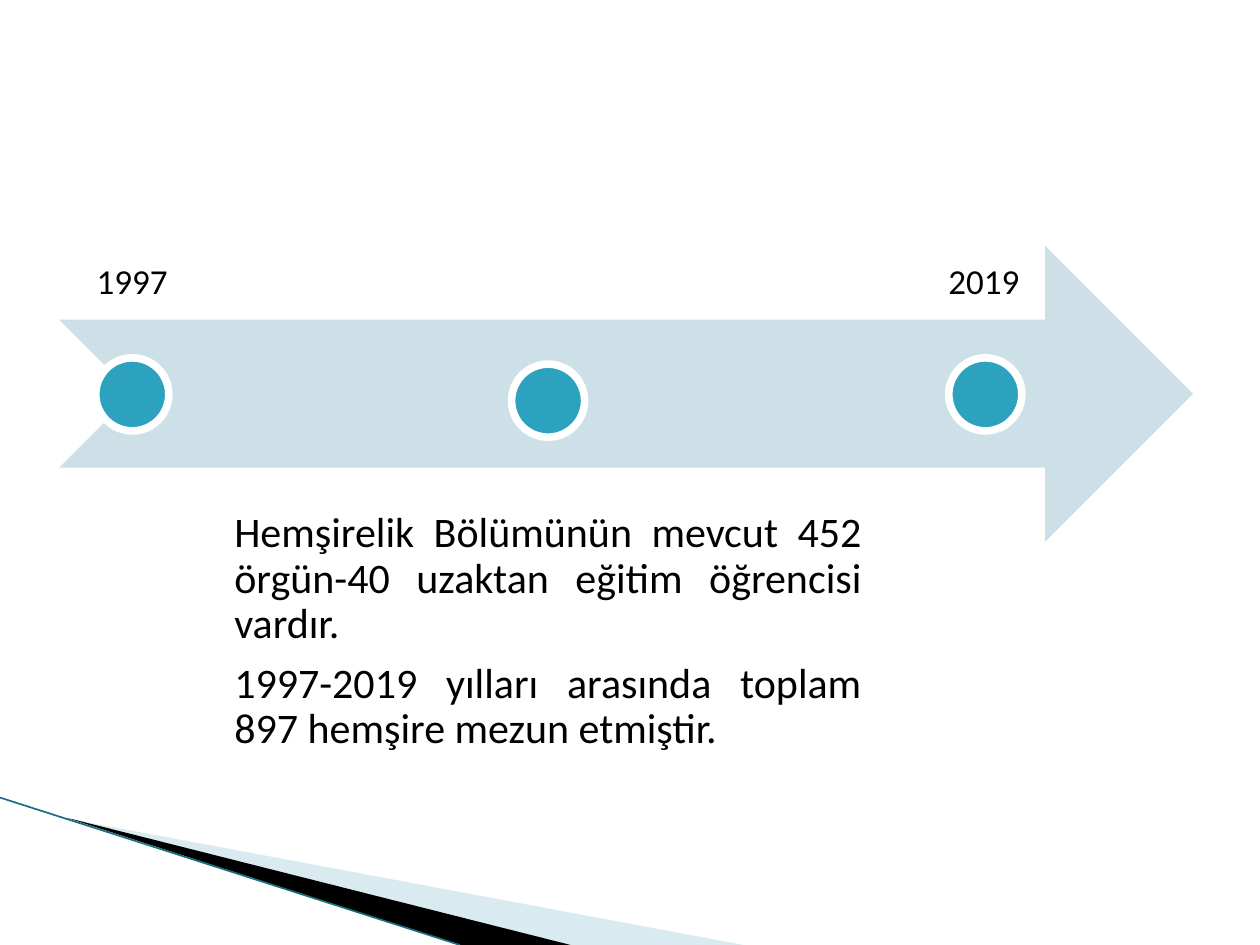
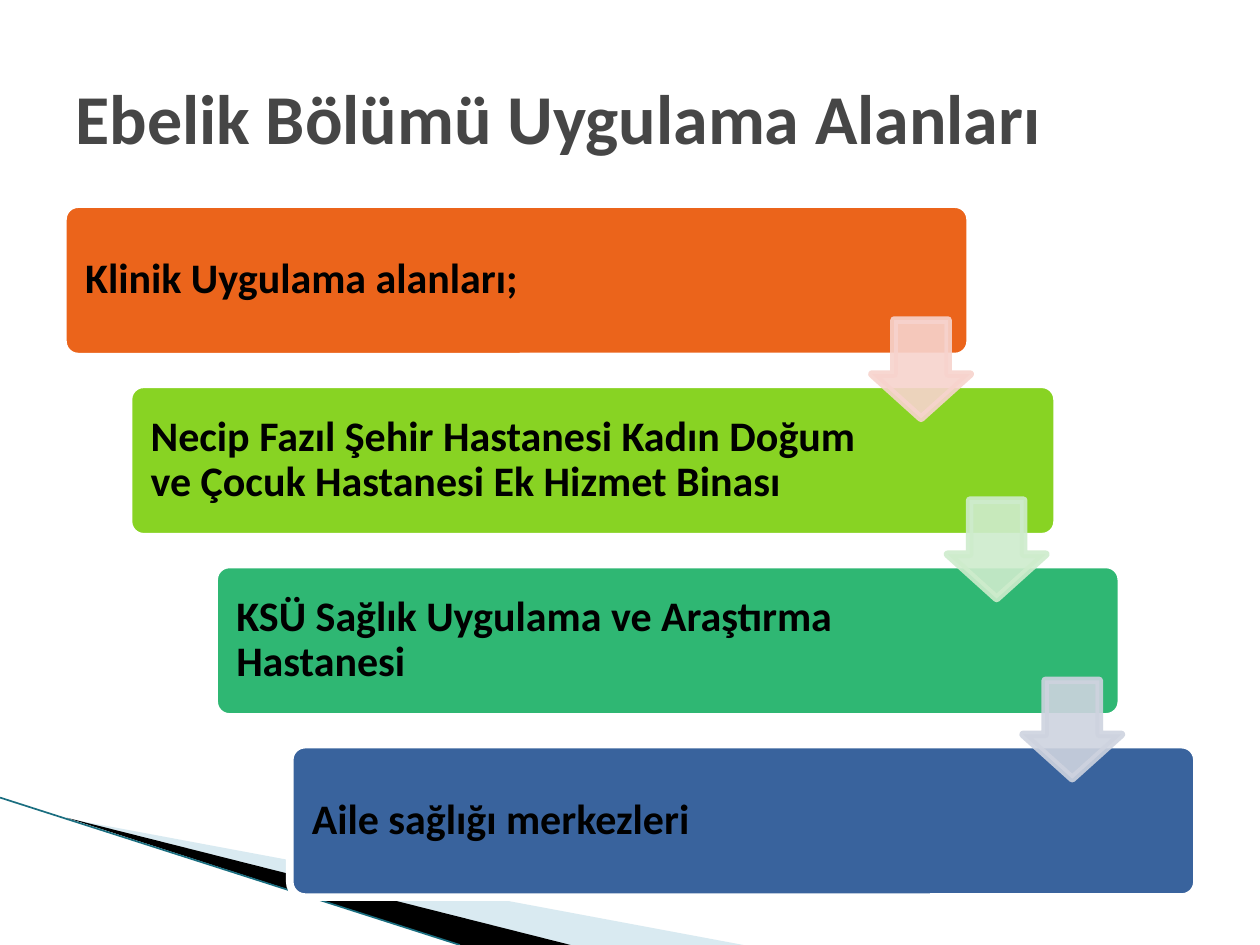
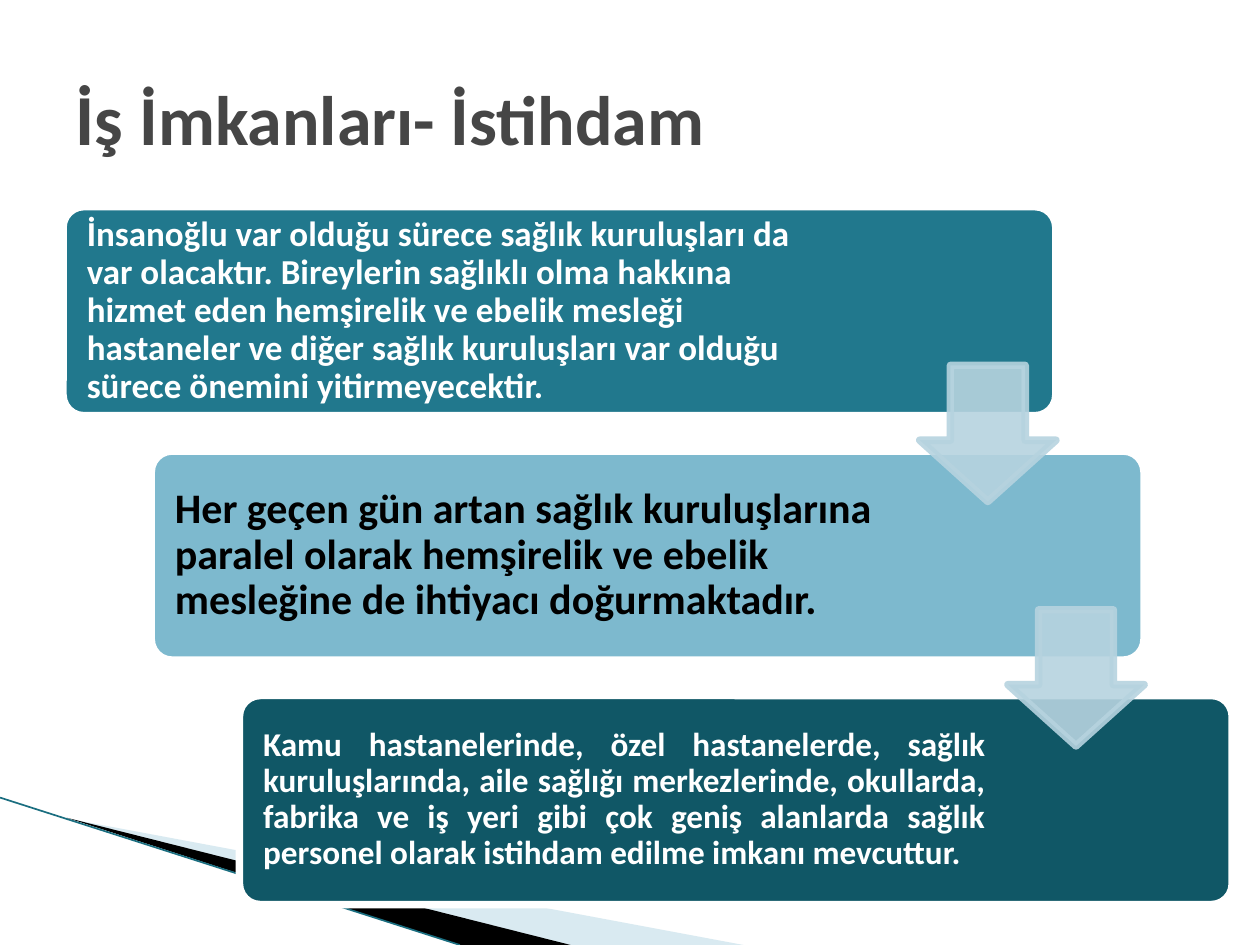
from lxml import etree
from pptx import Presentation
from pptx import util as u
from pptx.dml.color import RGBColor
from pptx.enum import shapes, text
from pptx.oxml.ns import qn

PX = 9144  # EMU in one px, at 100 px to the inch
SLIDE_WIDTH, SLIDE_HEIGHT = 1000, 750
FONT = "Calibri"
OUTLINE = 4.33
TITLE_ONLY, BLANK = 5, 6
LEFT, CENTER, JUSTIFY = text.PP_ALIGN.LEFT, text.PP_ALIGN.CENTER, text.PP_ALIGN.JUSTIFY
MIDDLE, BOTTOM, TOP = text.MSO_ANCHOR.MIDDLE, text.MSO_ANCHOR.BOTTOM, text.MSO_ANCHOR.TOP

COLORS = {
    "white": "FFFFFF", "black": "000000", "title": "464646",
    "swoosh": "A0CBDC", "swoosh line": "1A6E80",
    "timeline": "CDE0E8", "dot": "2DA2BF",
    "orange": "EB641B", "lime": "88D323", "green": "2FB773", "blue": "39639D",
    "pale orange": "F7D3CD", "pale lime": "CEECCC", "pale green": "CED3DF",
    "teal": "21788D", "sky": "7DB9CE", "deep teal": "105766", "pale teal": "B6D3DF",
}

SWOOSH = [  # fill, opacity in percent, outline points
    ("swoosh", 40, [(55, 650), (590, 750), (452, 750)]),
    ("black", 100, [(53, 649), (453, 750), (365, 750)]),
]
SWOOSH_LINE = (0, 633, 365, 750)

TIMELINE = {
    "arrow": (47, 195, 900, 235),
    "dots": [(76, 284), (406, 289), (753, 284)],
    "dot size": 58,
    "years": [("1997", (47, 23, 116, 232)), ("2019", (706, 23, 150, 232))],
    "story": [
        "Hemşirelik Bölümünün mevcut 452 örgün-40 uzaktan eğitim öğrencisi vardır.",
        "1997-2019 yılları arasında toplam 897 hemşire mezun etmiştir.",
    ],
    "story box": (167, 387, 536, 209),
}

# A card is (text, fill, text colour, size, alignment, shift, extra width).
STAIRCASES = [
    {
        "title": [("Ebelik Bölümü Uygulama Alanları", 40)],
        "title width": 848,
        "first card": (50, 162, 720, 121),
        "step": (60, 143),
        "right margin": 152,
        "cards": [
            ("Klinik Uygulama alanları;", "orange", "black", 24, LEFT, 0, 0),
            ("Necip Fazıl Şehir Hastanesi Kadın Doğum ve Çocuk Hastanesi Ek Hizmet Binası",
             "lime", "black", 24, LEFT, -8, 17),
            ("KSÜ Sağlık Uygulama ve Araştırma Hastanesi", "green", "black", 24, LEFT, 0, 0),
            ("Aile sağlığı merkezleri", "blue", "black", 24, LEFT, 0, 0),
        ],
        "arrows": ["pale orange", "pale lime", "pale green"],
        "arrow size": 78,
        "arrow drop": 92,
    },
    {
        "title": [("İş ", 41), ("İmkanları- İstihdam", 40)],
        "title width": 900,
        "first card": (50, 164, 788, 166),
        "step": (70, 194),
        "right margin": 191,
        "cards": [
            ("İnsanoğlu var olduğu sürece sağlık kuruluşları da var olacaktır. Bireylerin "
             "sağlıklı olma hakkına hizmet eden hemşirelik ve ebelik mesleği hastaneler ve "
             "diğer sağlık kuruluşları var olduğu sürece önemini yitirmeyecektir.",
             "teal", "white", 20, LEFT, 0, 0),
            ("Her geçen gün artan sağlık kuruluşlarına paralel olarak hemşirelik ve ebelik "
             "mesleğine de ihtiyacı doğurmaktadır.", "sky", "black", 24, LEFT, 0, 0),
            ("Kamu hastanelerinde, özel hastanelerde, sağlık kuruluşlarında, aile sağlığı "
             "merkezlerinde, okullarda, fabrika ve iş yeri gibi çok geniş alanlarda sağlık "
             "personel olarak istihdam edilme imkanı mevcuttur.",
             "deep teal", "white", 19, JUSTIFY, 0, 0),
        ],
        "arrows": ["pale teal", "pale teal"],
        "arrow size": 108,
        "arrow drop": 126,
    },
]


def emu(*lengths):
    return [u.Emu(length * PX) for length in lengths]


def rgb(name):
    return RGBColor.from_string(COLORS[name])


def paint(shape, fill, line=None, opacity=100):
    """Set a flat fill and outline; opacity applies to both."""
    shape.shadow.inherit = False
    shape.fill.solid()
    shape.fill.fore_color.rgb = rgb(fill)
    if line:
        shape.line.color.rgb = rgb(line)
        shape.line.width = u.Pt(OUTLINE)
    else:
        shape.line.fill.background()
    if opacity < 100:
        for color in shape._element.spPr.iter(qn("a:srgbClr")):
            etree.SubElement(color, qn("a:alpha"), val=str(opacity * 1000))


def add_shape(slide, preset, box, fill, line=None, opacity=100):
    shape = slide.shapes.add_shape(preset, *emu(*box))
    paint(shape, fill, line, opacity)
    return shape


def style_run(run, size, color, bold):
    run.font.name = FONT
    run.font.size = u.Pt(size)
    run.font.bold = bold
    run.font.color.rgb = rgb(color)


def write(shape, lines, size, color, alignment, anchor, margins, bold=False):
    """Fill a shape with paragraphs; margins are left, top, right, bottom."""
    frame = shape.text_frame
    frame.word_wrap = True
    frame.vertical_anchor = anchor
    (frame.margin_left, frame.margin_top,
     frame.margin_right, frame.margin_bottom) = emu(*margins)
    frame.text = "\n".join(lines)
    for paragraph in frame.paragraphs:
        paragraph.alignment = alignment
        paragraph.line_spacing = 0.9
        paragraph.space_after = u.Pt(round(size * 0.35, 1))
        for run in paragraph.runs:
            style_run(run, size, color, bold)


def add_swoosh(slide):
    for fill, opacity, points in SWOOSH:
        builder = slide.shapes.build_freeform(*points[0], scale=PX)
        builder.add_line_segments(points[1:])
        paint(builder.convert_to_shape(), fill, opacity=opacity)
    line = slide.shapes.add_connector(shapes.MSO_CONNECTOR.STRAIGHT, *emu(*SWOOSH_LINE))
    line.line.color.rgb = rgb("swoosh line")
    line.line.width = u.Pt(0.95)
    etree.SubElement(line._element.spPr, qn("a:effectLst"))


def add_slide(presentation, layout):
    slide = presentation.slides.add_slide(presentation.slide_layouts[layout])
    add_swoosh(slide)
    return slide


def set_title(slide, parts, width):
    title = slide.shapes.title
    title.left, title.top, title.width, title.height = emu(50, 30, width, 125)
    title.text_frame.vertical_anchor = MIDDLE
    paragraph = title.text_frame.paragraphs[0]
    paragraph.alignment = LEFT
    for words, size in parts:
        run = paragraph.add_run()
        run.text = words
        style_run(run, size, "title", True)


def add_timeline(slide, timeline):
    preset = shapes.MSO_SHAPE
    add_shape(slide, preset.NOTCHED_RIGHT_ARROW, timeline["arrow"], "timeline")
    size = timeline["dot size"]
    for left, top in timeline["dots"]:
        add_shape(slide, preset.OVAL, (left, top, size, size), "dot", "white")
    for year, box in timeline["years"]:
        label = slide.shapes.add_textbox(*emu(*box))
        write(label, [year], 20, "black", CENTER, BOTTOM, [16] * 4)
    story = slide.shapes.add_textbox(*emu(*timeline["story box"]))
    write(story, timeline["story"], 24, "black", JUSTIFY, TOP, [19] * 4)


def add_staircase(slide, stairs):
    """Place cards down a diagonal, then an arrow from each card to the next."""
    left, top, width, height = stairs["first card"]
    step_x, step_y = stairs["step"]
    margins = (14, 5, stairs["right margin"], 5)
    for i, (words, fill, color, size, alignment, shift, extra) in enumerate(stairs["cards"]):
        box = (left + i * step_x + shift, top + i * step_y, width + extra, height)
        card = add_shape(slide, shapes.MSO_SHAPE.ROUNDED_RECTANGLE, box, fill, "white")
        card.adjustments[0] = 0.1
        write(card, [words], size, color, alignment, MIDDLE, margins, bold=True)
    side = stairs["arrow size"]
    for i, color in enumerate(stairs["arrows"]):
        box = (left + width - side + i * step_x,
               top + stairs["arrow drop"] + i * step_y, side, side)
        arrow = add_shape(slide, shapes.MSO_SHAPE.DOWN_ARROW, box, color, color, opacity=90)
        # The preset lists the shaft width first, then the head length.
        arrow.adjustments[0], arrow.adjustments[1] = 0.55, 0.45


def main():
    presentation = Presentation()
    presentation.slide_width, presentation.slide_height = emu(SLIDE_WIDTH, SLIDE_HEIGHT)
    add_timeline(add_slide(presentation, BLANK), TIMELINE)
    for stairs in STAIRCASES:
        slide = add_slide(presentation, TITLE_ONLY)
        set_title(slide, stairs["title"], stairs["title width"])
        add_staircase(slide, stairs)
    presentation.save("out.pptx")


if __name__ == "__main__":
    main()
